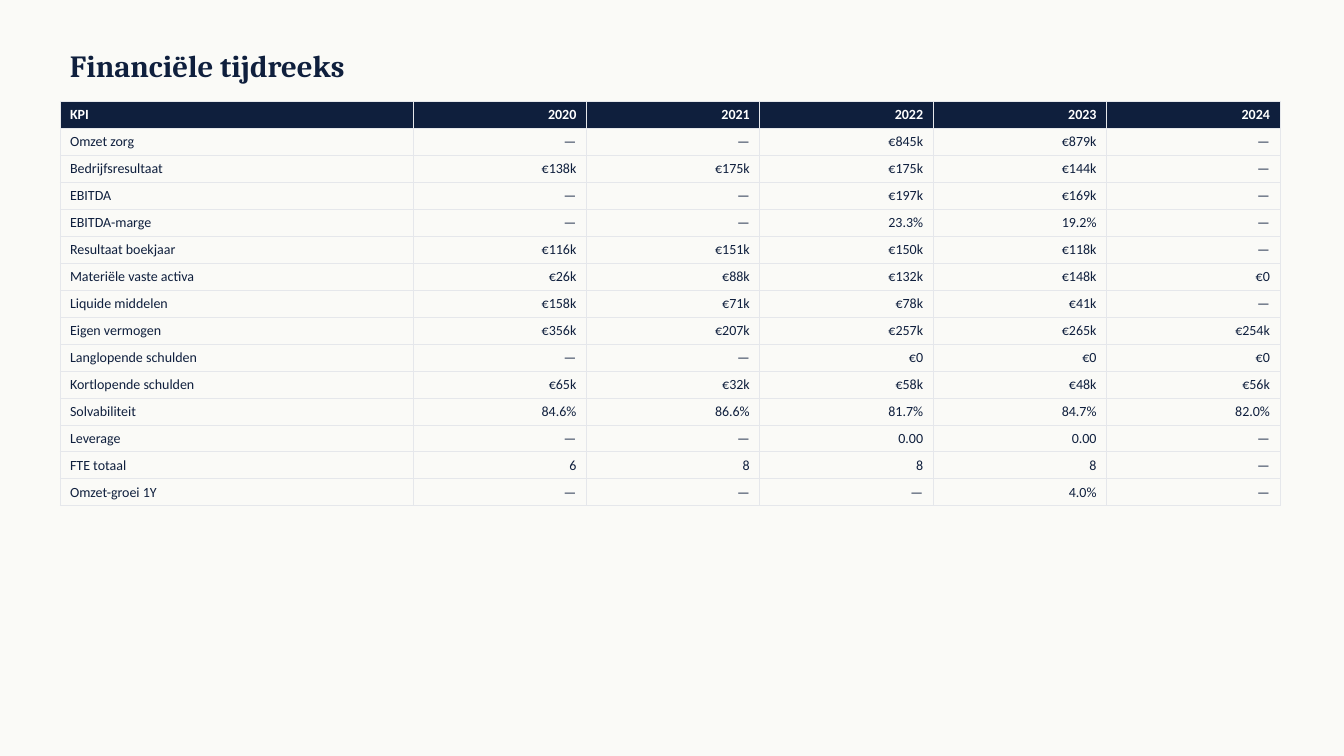
from pptx import Presentation
from pptx import util as u
from pptx.dml.color import RGBColor
from pptx.enum import text
from pptx.oxml import parse_xml
from pptx.oxml.ns import nsdecls

NAVY = RGBColor(0x0F, 0x1F, 0x3D)
WHITE = RGBColor(0xFF, 0xFF, 0xFF)
PAPER = RGBColor(0xFA, 0xFA, 0xF7)
RULE = RGBColor(0xE5, 0xE7, 0xEB)

TITLE_FONT = {"name": "Cambria", "size": u.Pt(22), "bold": True}
CELL_FONT = {"name": "Calibri", "size": u.Pt(10)}

KPI_ROWS = [
    ("KPI", "2020", "2021", "2022", "2023", "2024"),
    ("Omzet zorg", "—", "—", "€845k", "€879k", "—"),
    ("Bedrijfsresultaat", "€138k", "€175k", "€175k", "€144k", "—"),
    ("EBITDA", "—", "—", "€197k", "€169k", "—"),
    ("EBITDA-marge", "—", "—", "23.3%", "19.2%", "—"),
    ("Resultaat boekjaar", "€116k", "€151k", "€150k", "€118k", "—"),
    ("Materiële vaste activa", "€26k", "€88k", "€132k", "€148k", "€0"),
    ("Liquide middelen", "€158k", "€71k", "€78k", "€41k", "—"),
    ("Eigen vermogen", "€356k", "€207k", "€257k", "€265k", "€254k"),
    ("Langlopende schulden", "—", "—", "€0", "€0", "€0"),
    ("Kortlopende schulden", "€65k", "€32k", "€58k", "€48k", "€56k"),
    ("Solvabiliteit", "84.6%", "86.6%", "81.7%", "84.7%", "82.0%"),
    ("Leverage", "—", "—", "0.00", "0.00", "—"),
    ("FTE totaal", "6", "8", "8", "8", "—"),
    ("Omzet-groei 1Y", "—", "—", "—", "4.0%", "—"),
]


def px(length):
    return u.Emu(round(length * 914400 / 100.8))


def write(para, words, color, font_values):
    span = para.add_run()
    span.text = words
    span.font.color.rgb = color
    for name, value in font_values.items():
        setattr(span.font, name, value)


# Slide
deck = Presentation()
deck.slide_width, deck.slide_height = px(1344), px(756)
page = deck.slides.add_slide(deck.slide_layouts[6])
page.background.fill.solid()
page.background.fill.fore_color.rgb = PAPER

# Title
box = page.shapes.add_textbox(px(60), px(40), px(1210), px(50))
box.text_frame.word_wrap = True
box.text_frame.vertical_anchor = text.MSO_ANCHOR.MIDDLE
write(box.text_frame.paragraphs[0], "Financiële tijdreeks", NAVY, TITLE_FONT)

# KPI table: one label column, then equal year columns
year_count = len(KPI_ROWS[0]) - 1
table = page.shapes.add_table(len(KPI_ROWS), year_count + 1,
                              px(60), px(101), px(1220), px(27 * len(KPI_ROWS))).table
table.first_row = table.horz_banding = False
for index, column in enumerate(table.columns):
    column.width = px(353) if index == 0 else u.Emu(px(1220 - 353) // year_count)

for row_index, values in enumerate(KPI_ROWS):
    is_header = row_index == 0
    table.rows[row_index].height = px(27)
    for column_index, value in enumerate(values):
        cell = table.cell(row_index, column_index)
        para = cell.text_frame.paragraphs[0]
        if column_index:
            para.alignment = text.PP_ALIGN.RIGHT
        write(para, value, WHITE if is_header else NAVY, {**CELL_FONT, "bold": is_header})

        # Borders come before the fill in the cell properties
        for side in ("lnL", "lnR", "lnT", "lnB"):
            cell._tc.get_or_add_tcPr().append(parse_xml(
                f'<a:{side} {nsdecls("a")} w="{u.Pt(0.5)}"><a:solidFill>'
                f'<a:srgbClr val="{RULE}"/></a:solidFill></a:{side}>'))
        if is_header:
            cell.fill.solid()
            cell.fill.fore_color.rgb = NAVY
        else:
            cell.fill.background()

deck.save("out.pptx")
